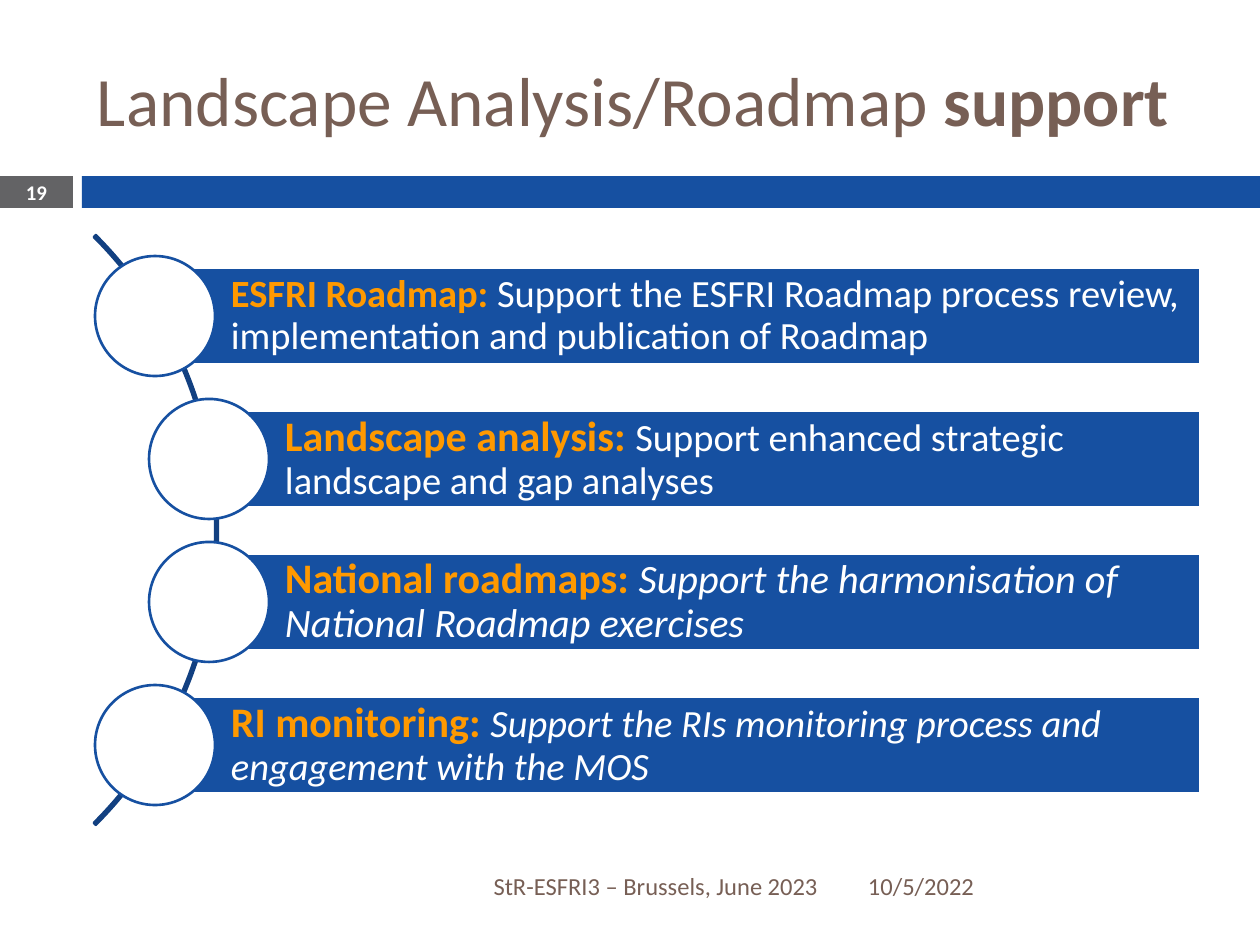
from pptx import Presentation
from pptx.dml.color import RGBColor
from pptx.enum.shapes import MSO_SHAPE
from pptx.enum.text import MSO_ANCHOR, PP_ALIGN
from pptx.util import Pt

RECT, OVAL, ARC = MSO_SHAPE.RECTANGLE, MSO_SHAPE.OVAL, MSO_SHAPE.BLOCK_ARC
LEFT, MID, RIGHT = PP_ALIGN.LEFT, PP_ALIGN.CENTER, PP_ALIGN.RIGHT
ANCHOR = MSO_ANCHOR.MIDDLE
SCALE = 914400 / 126
HUES = {"blue": "1650A1", "navy": "124081", "gold": "FF9900",
        "brown": "775F55", "gray": "636365", "white": "FFFFFF"}

ITEMS = [
    ("ESFRI Roadmap: ", 22, "Support the ESFRI Roadmap process review, "
     "implementation and publication of Roadmap", 22, False),
    ("Landscape analysis: ", 24,
     "Support enhanced strategic landscape and gap analyses", 22, False),
    ("National roadmaps: ", 24,
     "Support the harmonisation of National Roadmap exercises", 23, True),
    ("RI monitoring: ", 24, "Support the RIs monitoring process and "
     "engagement with the MOS", 22, True),
]


def px(n):
    return round(n * SCALE)


def hue(name):
    return RGBColor.from_string(HUES[name])


def draw(slide, kind, box, fill=None, line=None):
    shape = slide.shapes.add_shape(kind, *map(px, box))
    shape.shadow.inherit = False
    if fill:
        shape.fill.solid()
        shape.fill.fore_color.rgb = hue(fill)
    else:
        shape.fill.background()
    if line:
        shape.line.color.rgb = hue(line)
        shape.line.width = Pt(1.5)
    else:
        shape.line.fill.background()
    return shape


def write(shape, runs, align=LEFT, pad=(13, 6, 13, 6), lead=1.0):
    frame = shape.text_frame
    left, top, right, base = map(px, pad)
    look = {"word_wrap": True, "vertical_anchor": ANCHOR,
            "margin_left": left, "margin_top": top,
            "margin_right": right, "margin_bottom": base}
    for key, value in look.items():
        setattr(frame, key, value)
    para = frame.paragraphs[0]
    para.alignment = align
    para.line_spacing = lead
    for text, size, color, form in runs:
        run = para.add_run()
        run.text = text
        look = {"name": "Calibri", "size": Pt(size), "bold": False, **form}
        for key, value in look.items():
            setattr(run.font, key, value)
        run.font.color.rgb = hue(color)


def label(slide, box, *runs, **form):
    write(slide.shapes.add_textbox(*map(px, box)), runs, **form)


def header(slide, box):
    x, y, w, h = box
    title = slide.shapes.title
    spot = {"left": x + 84, "top": y + 31, "width": 1124, "height": 136}
    for key, value in spot.items():
        setattr(title, key, px(value))
    write(title, [("Landscape Analysis/Roadmap ", 39.6, "brown", {}),
                  ("support", 39.6, "brown", {"bold": True})])
    top = y + h - 32
    draw(slide, RECT, (x, top, 73, 32), "gray")
    draw(slide, RECT, (x + 82, top, w - 82, 32), "blue")
    label(slide, (x, top - 1, 73, 34),
          ("19", 11.9, "white", {"bold": True}), align=MID)


def row(slide, box, item):
    x, y, w, h = box
    head, big, text, size, slant = item
    bar = draw(slide, RECT, box, "blue", "white")
    write(bar, [(head, big, "gold", {"bold": True}),
                (text, size, "white", {"italic": slant})],
          pad=(76, 8, 8, 8), lead=0.9)
    dot = 120
    draw(slide, OVAL, (x - dot // 2, y + (h - dot) // 2, dot, dot),
         "white", "blue")


def curve(slide, box):
    x, y, w, h = box
    size = 834
    arc = draw(slide, ARC, (x + 123 - size, y + (h - size) // 2, size, size),
               "navy", "navy")
    for i, value in enumerate((189, 27, 0.0033)):
        arc.adjustments[i] = value
    high, step = 96, 143
    for i, item in enumerate(ITEMS):
        shift = 54 if i in (1, 2) else 0
        start = 60 + shift
        row(slide, (x + start, y + 33 + i * step, w - start, high), item)


def footer(slide, box):
    x, y, w, h = box
    label(slide, (x, y, 747, h),
          ("StR-ESFRI3 – Brussels, June 2023", 14, "brown", {}), align=RIGHT)
    label(slide, (x + 771, y, w - 771, h), ("10/5/2022", 14, "brown", {}))


def main():
    deck = Presentation()
    deck.slide_width, deck.slide_height = px(1260), px(945)
    slide = deck.slides.add_slide(deck.slide_layouts[5])
    header(slide, (0, 0, 1260, 208))
    curve(slide, (95, 235, 1105, 590))
    footer(slide, (84, 861, 1139, 50))
    deck.save("out.pptx")


if __name__ == "__main__":
    main()
